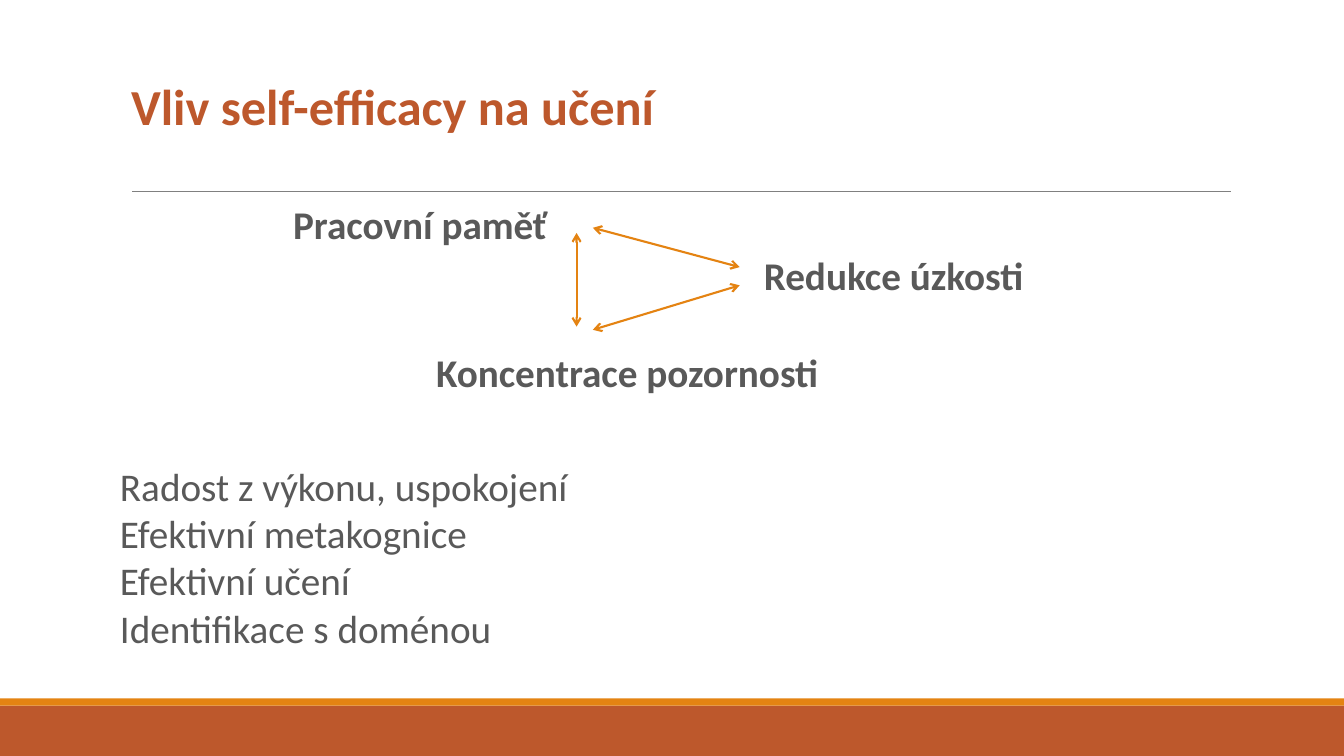
from dataclasses import dataclass

import pptx
import pptx.dml.color
import pptx.enum.shapes
import pptx.enum.text
import pptx.util
from lxml import etree
from pptx.oxml.ns import qn

Cm = pptx.util.Cm
RGB = pptx.dml.color.RGBColor.from_string


@dataclass(frozen=True)
class Theme:
    font: str = "Calibri"
    title_size: int = 36
    text_size: int = 28
    rust: str = "BD582C"
    orange: str = "E48312"
    text: str = "595959"
    rule: str = "808080"


class SlideBuilder:
    def __init__(self, s, theme):
        self.s = s
        self.theme = theme

    def place(self, sp, x, y, w, h):
        sp.left, sp.top, sp.width, sp.height = Cm(x), Cm(y), Cm(w), Cm(h)

    def fill_text(self, tf, lines, size, color, bold=False):
        """Fill a text frame with one plain, left-aligned paragraph per line."""
        tf.word_wrap = True
        tf.auto_size = pptx.enum.text.MSO_AUTO_SIZE.NONE
        tf.vertical_anchor = pptx.enum.text.MSO_ANCHOR.TOP
        for i, line in enumerate(lines):
            p = tf.add_paragraph() if i else tf.paragraphs[0]
            p.alignment = pptx.enum.text.PP_ALIGN.LEFT
            p.space_before = pptx.util.Pt(0)
            r = p.add_run()
            r.text = line
            r.font.name = self.theme.font
            r.font.size = pptx.util.Pt(size)
            r.font.bold = bold
            r.font.color.rgb = RGB(color)

    def bar(self, y, h, color):
        """Draw a filled band across the whole slide width."""
        sp = self.s.shapes.add_shape(
            pptx.enum.shapes.MSO_SHAPE.RECTANGLE, 0, Cm(y), Cm(33.87), Cm(h))
        sp.shadow.inherit = False
        sp.fill.solid()
        sp.fill.fore_color.rgb = RGB(color)
        sp.line.fill.background()

    def title(self, text, x, y, w, h):
        sp = self.s.shapes.title
        self.place(sp, x, y, w, h)
        self.fill_text(sp.text_frame, [text], self.theme.title_size, self.theme.rust, True)
        sp.text_frame.margin_top = Cm(0.36)

    def plain_list(self, lines, x, y, w, h):
        sp = self.s.placeholders[1]
        self.place(sp, x, y, w, h)
        self.fill_text(sp.text_frame, lines, self.theme.text_size, self.theme.text)
        for p in sp.text_frame.paragraphs:
            pPr = p._p.get_or_add_pPr()
            pPr.set("marL", "0")
            pPr.set("indent", "0")
            etree.SubElement(pPr, qn("a:buNone"))

    def label(self, text, x, y, w):
        sp = self.s.shapes.add_textbox(Cm(x), Cm(y), Cm(w), Cm(1.45))
        self.fill_text(sp.text_frame, [text], self.theme.text_size, self.theme.text, True)

    def line(self, start, end, color, width):
        c = self.s.shapes.add_connector(
            pptx.enum.shapes.MSO_CONNECTOR.STRAIGHT, *map(Cm, start + end))
        c.line.color.rgb = RGB(color)
        c.line.width = pptx.util.Pt(width)
        etree.SubElement(c._element.spPr, qn("a:effectLst"))
        return c

    def double_arrow(self, start, end):
        c = self.line(start, end, self.theme.orange, 1.5)
        ln = c._element.spPr.find(qn("a:ln"))
        for tag in ("a:headEnd", "a:tailEnd"):
            etree.SubElement(ln, qn(tag), type="arrow")


def main():
    prs = pptx.Presentation()
    prs.slide_width, prs.slide_height = Cm(33.87), Cm(19.05)
    theme = Theme()
    slide = SlideBuilder(prs.slides.add_slide(prs.slide_layouts[1]), theme)

    slide.bar(17.78, 1.27, theme.rust)
    slide.bar(17.6, 0.18, theme.orange)
    slide.line((3.33, 4.83), (31.01, 4.83), theme.rule, 0.5)

    slide.title("Vliv self-efficacy na učení", 3.05, 1.52, 27.48, 4.39)
    slide.plain_list(
        ["Radost z výkonu, uspokojení", "Efektivní metakognice",
         "Efektivní učení", "Identifikace s doménou"],
        2.77, 11.53, 25.93, 6.25)

    slide.label("Pracovní paměť", 7.14, 4.93, 14.81)
    slide.label("Koncentrace pozornosti", 10.74, 8.66, 14.81)
    slide.label("Redukce úzkosti", 19, 6.22, 11.07)

    slide.double_arrow((14.94, 5.74), (18.64, 6.73))
    slide.double_arrow((14.53, 5.87), (14.53, 8.23))
    slide.double_arrow((14.94, 8.31), (18.64, 7.19))

    prs.save("out.pptx")


if __name__ == "__main__":
    main()
